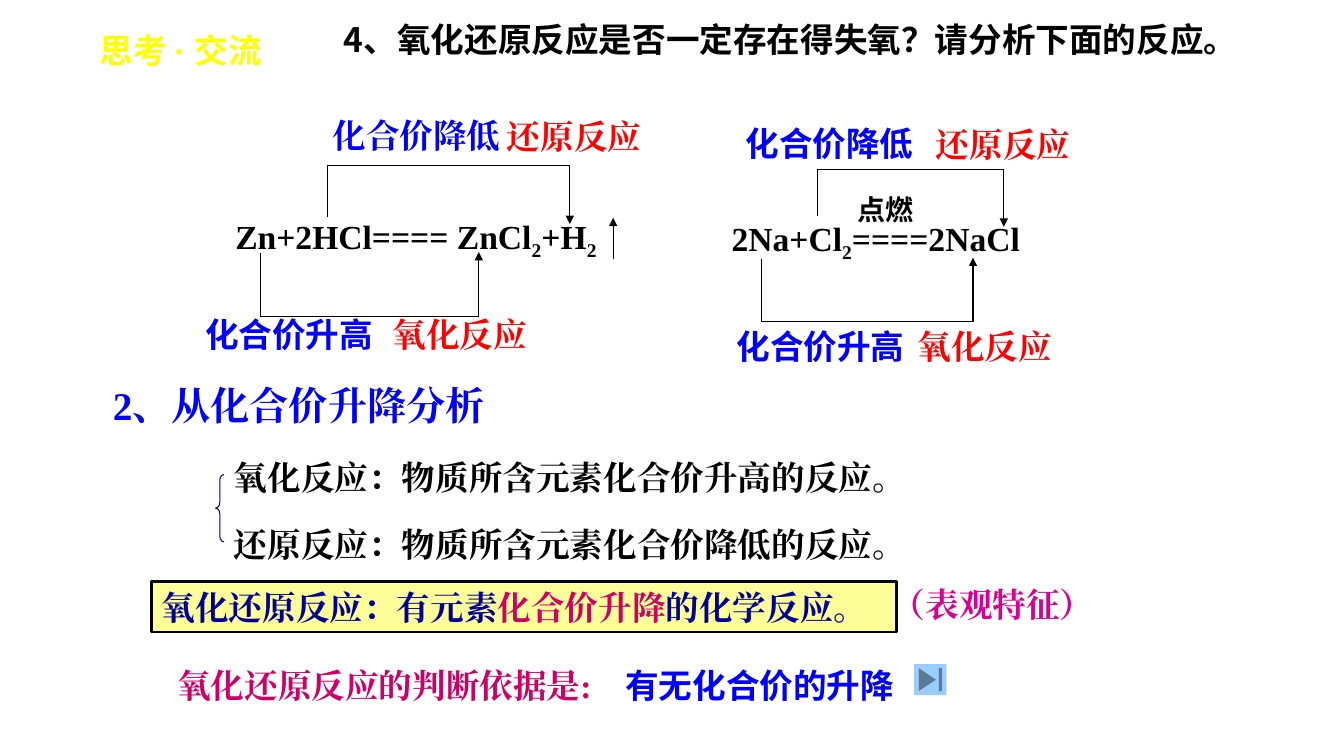
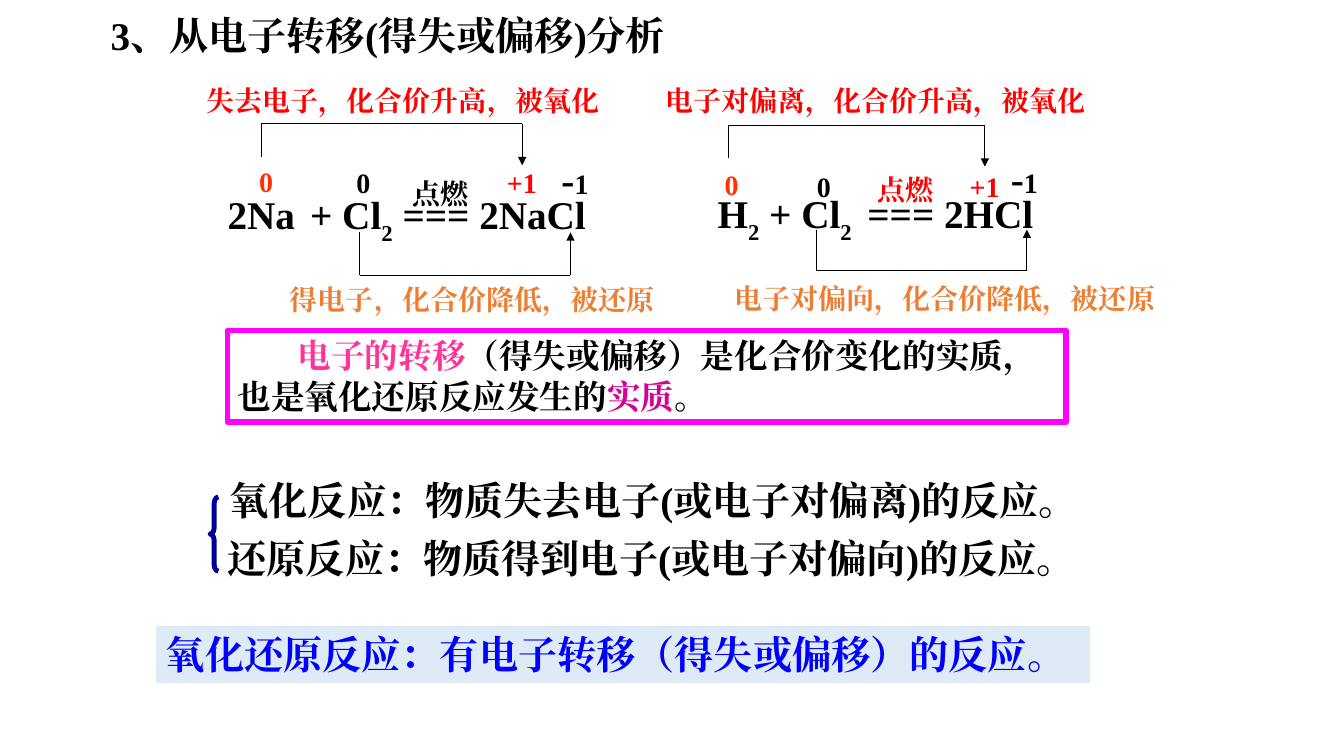
from lxml import etree
from pptx import Presentation
from pptx import util as u
from pptx.dml import color as dml
from pptx.enum import lang, shapes, text
from pptx.oxml import ns

COLOURS = {
    "black": "000000",
    "blue": "0000FF",
    "navy": "000099",
    "red": "FF0000",
    "vermilion": "FF3300",
    "orange": "ED7D31",
    "yellow": "FFFF00",
    "crimson": "CC0066",
    "magenta": "D60093",
    "pink": "FF3399",
    "fuchsia": "FF00FF",
    "pale_yellow": "FFFF99",
    "pale_blue": "DEEBF7",
    "sky": "99CCFF",
}
SERIF, SANS, ROBOTO, CHINESE = "Times New Roman", "Arial", "Roboto", "Noto Sans CJK SC"
HEADING, BODY, NOTE = 28, 24, 20


def rgb(name):
    return dml.RGBColor.from_string(COLOURS[name])


def style_font(font, colour=None, size=None, name=None):
    if colour:
        font.color.rgb = rgb(colour)
    if size:
        font.size = u.Pt(size)
    if name:
        font.name = name
        etree.SubElement(font._element, ns.qn("a:ea"), typeface=name)


def write_paragraph(paragraph, content, colour, size, name):
    font = paragraph.font
    font.bold = True
    font.language_id = lang.MSO_LANGUAGE_ID.SIMPLIFIED_CHINESE
    style_font(font, colour, size, name)
    paragraph.alignment = text.PP_ALIGN.LEFT
    pieces = [(content, {})] if isinstance(content, str) else content
    for words, style in pieces:
        run = paragraph.add_run()
        run.text = words
        style_font(run.font, **style)
    return paragraph


def prepare_frame(shape):
    frame = shape.text_frame
    frame.word_wrap = True
    frame.vertical_anchor = text.MSO_ANCHOR.TOP
    return frame


def add_text(slide, content, left, top, width, colour="black", size=BODY, name=SERIF):
    height = round(size * 1.2 + 7.2)
    box = slide.shapes.add_textbox(u.Pt(left), u.Pt(top), u.Pt(width), u.Pt(height))
    paragraph = prepare_frame(box).paragraphs[0]
    return write_paragraph(paragraph, content, colour, size, name)


def add_formula(slide, formula, left, top, width, size, drop):
    first, *rest = formula.split("_")
    paragraph = add_text(slide, first, left, top, width, size=size)
    for part in rest:
        subscript = paragraph.add_run()
        subscript.text = part[0]
        subscript.font._element.set("baseline", str(-drop * 1000))
        if part[1:]:
            paragraph.add_run().text = part[1:]


def add_line(slide, start, end, arrow=False):
    points = [u.Pt(value) for value in (*start, *end)]
    line = slide.shapes.add_connector(shapes.MSO_CONNECTOR.STRAIGHT, *points)
    line.line.color.rgb = rgb("black")
    line.line.width = u.Pt(0.75)
    properties = line._element.spPr
    if arrow:
        etree.SubElement(properties.find(ns.qn("a:ln")), ns.qn("a:tailEnd"), type="triangle")
    etree.SubElement(properties, ns.qn("a:effectLst"))


def add_bracket(slide, left, right, start, bar, end):
    add_line(slide, (left, start), (left, bar))
    add_line(slide, (left, bar), (right, bar))
    add_line(slide, (right, bar), (right, end), arrow=True)


def add_shape(slide, kind, left, top, width, height, fill=None, line=None, weight=0.75):
    shape = slide.shapes.add_shape(kind, u.Pt(left), u.Pt(top), u.Pt(width), u.Pt(height))
    shape.shadow.inherit = False
    if fill:
        shape.fill.solid()
        shape.fill.fore_color.rgb = rgb(fill)
    else:
        shape.fill.background()
    if line:
        shape.line.color.rgb = rgb(line)
        shape.line.width = u.Pt(weight)
    else:
        shape.line.fill.background()
    return shape


def add_panel(slide, contents, bounds, colour, size, **look):
    panel = add_shape(slide, shapes.MSO_SHAPE.RECTANGLE, *bounds, **look)
    frame = prepare_frame(panel)
    paragraphs = [frame.paragraphs[0]]
    paragraphs += [frame.add_paragraph() for _ in contents[1:]]
    for paragraph, content in zip(paragraphs, contents):
        write_paragraph(paragraph, content, colour, size, SERIF)
    return paragraphs


def add_brace(slide, left, top, width, height, curve, weight):
    brace = add_shape(slide, shapes.MSO_SHAPE.LEFT_BRACE, left, top, width, height,
                      line="navy", weight=weight)
    brace.adjustments[0] = curve


def build_valence_slide(slide):
    title = add_text(slide, "4、氧化还原反应是否一定存在得失氧？请分析下面的反应。",
                     238.5, 18, 715, name=CHINESE)
    title.line_spacing = 0.7
    add_text(slide, [("思考 ", {"name": CHINESE}), ("· ", {"name": SANS}),
                     ("交流", {"name": CHINESE})], 64, 18, 150, "yellow", name=None)

    add_formula(slide, "Zn+2HCl==== ZnCl_2+H_2", 161, 150.5, 346, BODY, 25)
    add_line(slide, (438, 185), (438, 155.5), arrow=True)
    add_formula(slide, "2Na+Cl_2====2NaCl", 515.5, 152, 225, BODY, 25)
    add_text(slide, "点燃", 605.5, 134, 72, size=NOTE, name=SANS)

    for bracket in (
        (234, 407, 155, 118, 160),
        (186, 342, 181, 226, 180),
        (584, 717, 154, 121, 162),
        (544, 695, 185, 230, 184),
    ):
        add_bracket(slide, *bracket)

    for words, left, top, name in (
        ("化合价降低", 230.5, 78.5, SERIF),
        ("化合价升高", 139.5, 221, ROBOTO),
        ("化合价降低", 525.5, 84.5, SANS),
        ("化合价升高", 519, 229.5, ROBOTO),
    ):
        add_text(slide, words, left, top, 138, "blue", name=name)
    for words, left, top in (
        ("还原反应", 355, 79),
        ("氧化反应", 273.5, 221),
        ("还原反应", 661.5, 85),
        ("氧化反应", 648.5, 229),
    ):
        add_text(slide, words, left, top, 113, "red")

    add_text(slide, "2、从化合价升降分析", 73.5, 268.5, 323, "blue", HEADING)
    add_brace(slide, 154, 339, 6, 48, 0.67, 0.75)
    add_text(slide, "氧化反应：物质所含元素化合价升高的反应。", 160, 322.5, 508)
    add_text(slide, "还原反应：物质所含元素化合价降低的反应。", 160, 370.5, 508)
    definition = [("氧化还原反应：有元素", {}), ("化合价升降", {"colour": "crimson"}),
                  ("的化学反应。", {})]
    add_panel(slide, [definition], (108.5, 415.5, 532, 36), "navy", BODY,
              fill="pale_yellow", line="black", weight=2)
    add_text(slide, "（表观特征）", 630, 413.5, 161, "magenta")

    for words, left, width, colour, name in (
        ("氧化还原反应的判断依据是:", 119.5, 320, "crimson", SERIF),
        ("有无化合价的升降", 439.5, 212, "blue", ROBOTO),
    ):
        add_text(slide, words, left, 464.5, width, colour, name=name).line_spacing = 1.25
    add_shape(slide, shapes.MSO_SHAPE.ACTION_BUTTON_END, 653, 474.5, 23, 22, fill="sky")


def build_electron_slide(slide):
    add_text(slide, "3、从电子转移(得失或偏移)分析", 72, 4.5, 424, size=HEADING)

    for formula, left, top, width in (
        ("2Na", 155.5, 132.5, 66),
        ("+ Cl_2 === 2NaCl", 214.5, 132.5, 222),
        ("H_2 + Cl_2", 505.5, 132, 115),
        ("=== 2HCl", 612.5, 132, 144),
    ):
        add_formula(slide, formula, left, top, width, HEADING, 30)

    for words, left, top, width, colour in (
        ("点燃", 287.5, 122.5, 60, "black"),
        ("0", 178, 114, 25, "vermilion"),
        ("+1", 355, 115, 38, "red"),
        ("0", 247.5, 115, 25, "black"),
        ("失去电子，化合价升高，被氧化", 140.5, 56, 304, "red"),
        ("得电子，化合价降低，被还原", 200, 198.5, 284, "orange"),
        ("点燃", 620, 120, 64, "red"),
        ("0", 510.5, 116, 25, "vermilion"),
        ("+1", 685.5, 117.5, 38, "red"),
        ("0", 576.5, 117.5, 25, "black"),
        ("电子对偏离，化合价升高，被氧化", 468, 56, 325, "red"),
        ("电子对偏向，化合价降低，被还原", 517.5, 197.5, 325, "orange"),
    ):
        add_text(slide, words, left, top, width, colour, NOTE)
    for left, top in ((394, 107.5), (715, 106.5)):
        add_text(slide, [("-", {}), ("1", {"size": NOTE})], left, top, 40, size=HEADING)

    for bracket in (
        (186.5, 373, 112, 88.5, 118),
        (257, 407.5, 166, 196.5, 166),
        (520.5, 703.5, 113, 89.5, 119),
        (583, 733.5, 164, 193.5, 164),
    ):
        add_bracket(slide, *bracket)

    essence = [
        [("电子的转移", {"colour": "pink"}), ("（得失或偏移）是化合价变化的实质，", {})],
        [("也是氧化还原反应发生的", {}), ("实质", {"colour": "magenta"}), ("。", {})],
    ]
    first, _ = add_panel(slide, essence, (162.5, 236, 599, 65.5), "black", BODY,
                         line="fuchsia", weight=4)
    first._p.get_or_add_pPr().set("indent", str(u.Pt(43)))

    add_brace(slide, 150, 355, 6, 53, 0.74, 3.5)
    add_text(slide, "氧化反应：物质失去电子(或电子对偏离)的反应。", 157, 337, 655, size=HEADING)
    add_text(slide, "还原反应：物质得到电子(或电子对偏向)的反应。", 155.5, 378, 655, size=HEADING)
    add_panel(slide, ["氧化还原反应：有电子转移（得失或偏移）的反应。"],
              (111.5, 447, 667, 41), "blue", HEADING, fill="pale_blue")


def main():
    presentation = Presentation()
    presentation.slide_width = u.Pt(960)
    presentation.slide_height = u.Pt(540)
    blank = presentation.slide_layouts[6]
    for build in (build_valence_slide, build_electron_slide):
        build(presentation.slides.add_slide(blank))
    presentation.save("out.pptx")


if __name__ == "__main__":
    main()
